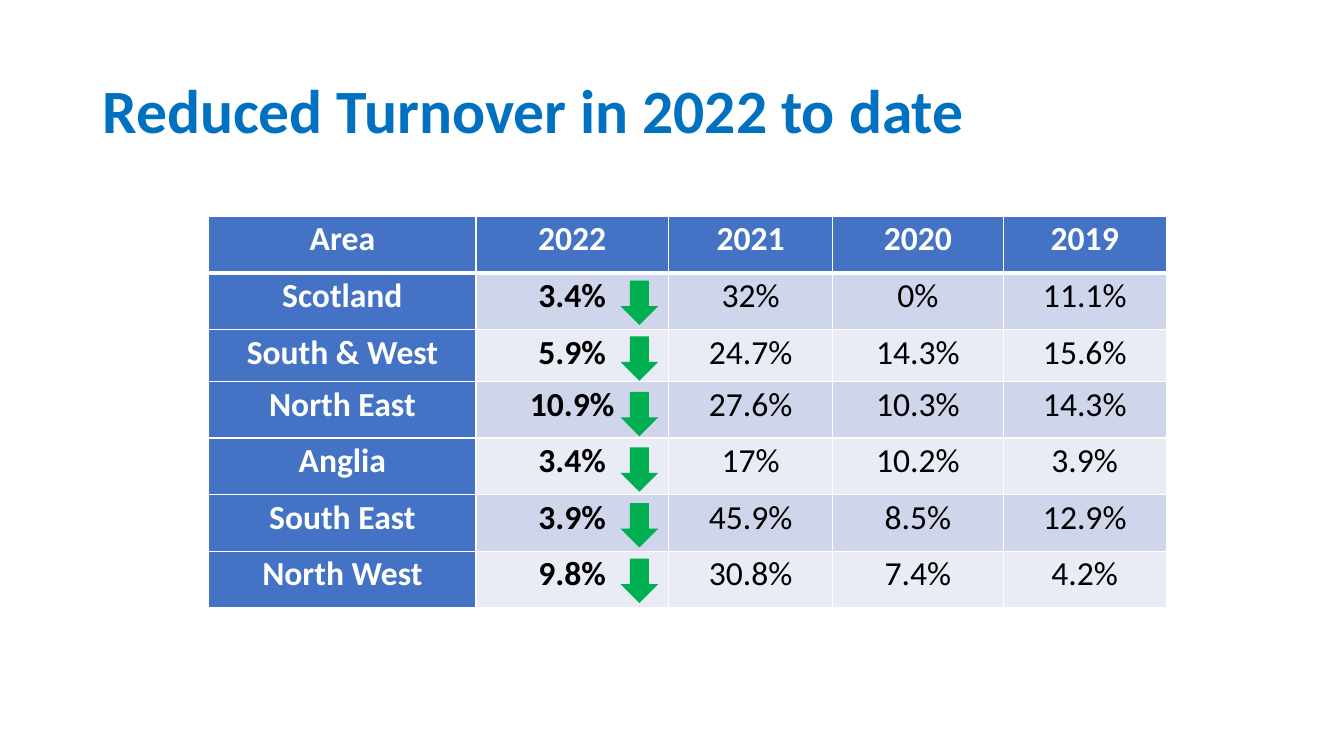
from lxml.etree import SubElement
from pptx import Presentation
from pptx.dml.color import RGBColor
from pptx.enum.shapes import MSO_SHAPE
from pptx.enum.text import MSO_ANCHOR, PP_ALIGN
from pptx.oxml.ns import qn
from pptx.util import Pt

FONT = "Calibri"
COLORS = {
    "title": "0070C0",
    "header": "4472C4",
    "odd": "CFD5EA",
    "even": "E9EBF5",
    "white": "FFFFFF",
    "text": "000000",
    "arrow": "00B050",
}
TURNOVER = [
    ["Area", "2022", "2021", "2020", "2019"],
    ["Scotland", "3.4%", "32%", "0%", "11.1%"],
    ["South & West", "5.9%", "24.7%", "14.3%", "15.6%"],
    ["North East", "10.9%", "27.6%", "10.3%", "14.3%"],
    ["Anglia", "3.4%", "17%", "10.2%", "3.9%"],
    ["South East", "3.9%", "45.9%", "8.5%", "12.9%"],
    ["North West", "9.8%", "30.8%", "7.4%", "4.2%"],
]
COL_WIDTHS = [190.8, 137.5, 117.4, 121.7, 116.6]
ROW_HEIGHTS = [40.4, 40.4, 37.3, 40.4, 40.4, 40.4, 40.4]


def rgb(name):
    return RGBColor.from_string(COLORS[name])


def set_font(p, size, color, bold):
    p.font.name = FONT
    p.font.size = Pt(size)
    p.font.bold = bold
    p.font.color.rgb = rgb(color)


def add_title(slide, text):
    sp = slide.shapes.title
    sp.left, sp.top, sp.width, sp.height = Pt(66), Pt(28.8), Pt(828), Pt(104.4)
    tf = sp.text_frame
    tf.word_wrap = True
    tf.vertical_anchor = MSO_ANCHOR.MIDDLE
    p = tf.paragraphs[0]
    p.text = text
    p.alignment = PP_ALIGN.LEFT
    p.line_spacing = 0.9
    set_font(p, 44, "title", True)


def set_borders(cell, widths):
    tc_pr = cell._tc.get_or_add_tcPr()
    for side, width in widths.items():
        ln = SubElement(tc_pr, qn(f"a:ln{side}"), w=str(Pt(width)))
        fill = SubElement(ln, qn("a:solidFill"))
        SubElement(fill, qn("a:srgbClr"), val=COLORS["white"])


def format_cell(cell, text, row, col):
    heading = row == 0 or col == 0
    cell.margin_left = cell.margin_right = Pt(5)
    cell.margin_top = cell.margin_bottom = Pt(0)
    # The rule under the year row is heavier than the rest
    set_borders(cell, {"L": 1, "R": 1, "T": 3 if row == 1 else 1,
                       "B": 3 if row == 0 else 1})
    cell.fill.solid()
    band = "odd" if row % 2 else "even"
    cell.fill.fore_color.rgb = rgb("header" if heading else band)
    p = cell.text_frame.paragraphs[0]
    p.text = text
    p.alignment = PP_ALIGN.CENTER
    p.line_spacing = 1.07
    p.space_after = Pt(8)
    set_font(p, 24, "white" if heading else "text", heading or col == 1)


def add_turnover_table(slide):
    frame = slide.shapes.add_table(
        len(TURNOVER), len(COL_WIDTHS), Pt(149.2), Pt(154.4),
        Pt(sum(COL_WIDTHS)), Pt(sum(ROW_HEIGHTS)))
    table = frame.table
    table.first_col = True
    for column, width in zip(table.columns, COL_WIDTHS):
        column.width = Pt(width)
    for row, height in zip(table.rows, ROW_HEIGHTS):
        row.height = Pt(height)
    for r, values in enumerate(TURNOVER):
        for c, text in enumerate(values):
            format_cell(table.cell(r, c), text, r, c)


def add_down_arrow(slide, left, top):
    sp = slide.shapes.add_shape(
        MSO_SHAPE.UP_ARROW, Pt(left), Pt(top), Pt(27), Pt(31.7))
    sp.rotation = 180
    sp.shadow.inherit = False
    sp.fill.solid()
    sp.fill.fore_color.rgb = rgb("arrow")
    sp.line.fill.background()


def main():
    prs = Presentation()
    prs.slide_width, prs.slide_height = Pt(960), Pt(540)
    slide = prs.slides.add_slide(prs.slide_layouts[5])

    add_title(slide, "Reduced Turnover in 2022 to date")
    add_turnover_table(slide)

    # One arrow beside each 2022 figure
    for i in range(len(TURNOVER) - 1):
        add_down_arrow(slide, 443.2, 200.5 + 39.7 * i)

    prs.save("out.pptx")


if __name__ == "__main__":
    main()
